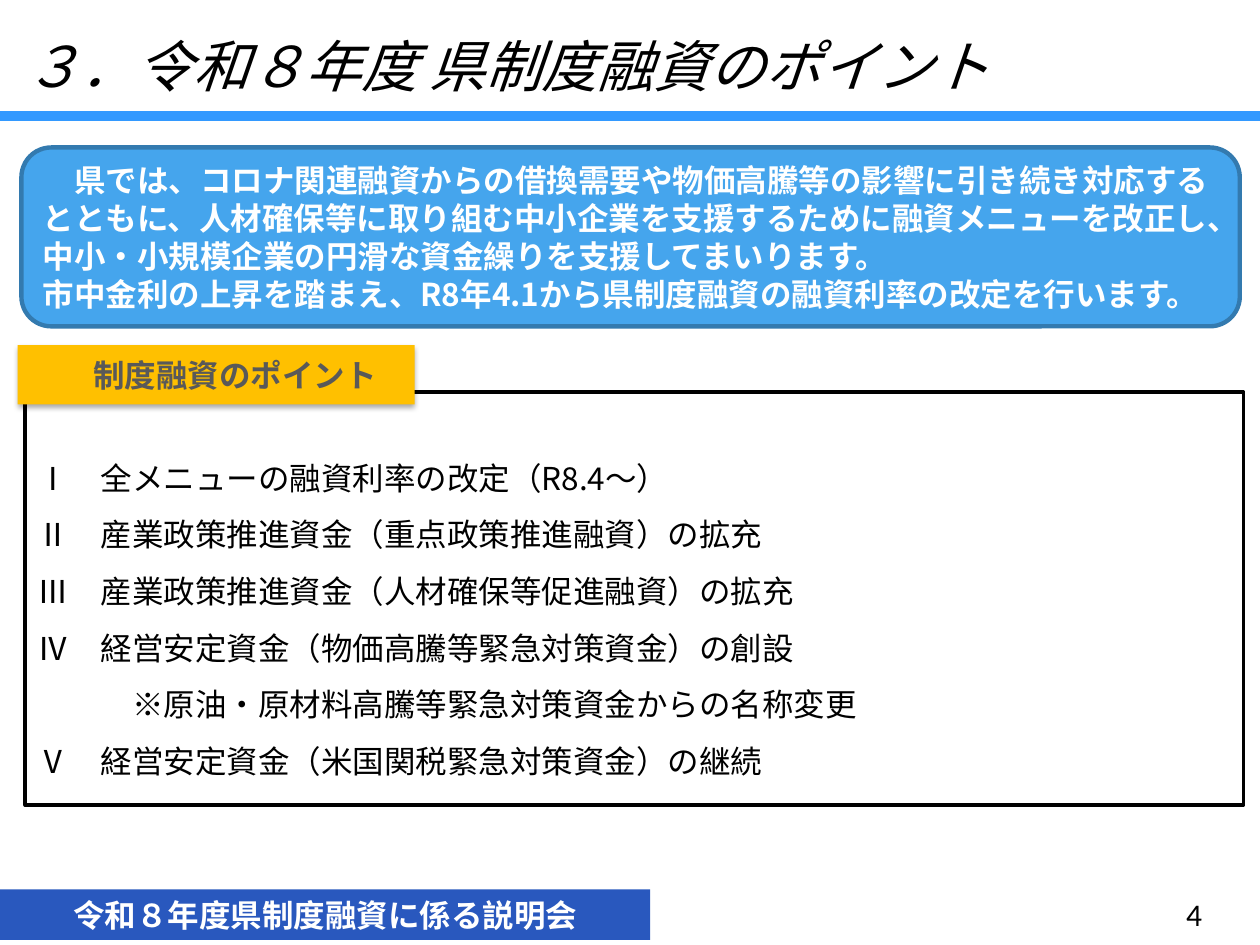
"""Build the slide on the key points of the prefectural loan scheme."""
import pptx
import pptx.util
import pptx.dml.color
import pptx.enum.shapes
import pptx.enum.text
import pptx.oxml
import pptx.oxml.ns

Inches = pptx.util.Inches
Pt = pptx.util.Pt
RGB = pptx.dml.color.RGBColor
KIND = pptx.enum.shapes.MSO_SHAPE
ALIGN = pptx.enum.text.PP_ALIGN
ANCHOR = pptx.enum.text.MSO_ANCHOR

BLACK = RGB(0x00, 0x00, 0x00)
WHITE = RGB(0xFF, 0xFF, 0xFF)
GREY = RGB(0x59, 0x59, 0x59)
GOLD = RGB(0xFF, 0xC0, 0x00)
SKY = RGB(0x45, 0xA5, 0xED)
STEEL = RGB(0x33, 0x7A, 0xAF)
NAVY = RGB(0x29, 0x58, 0xBE)
RULE = RGB(0x33, 0x99, 0xFF)

NOTO = "Noto Sans CJK JP"
CALIBRI = "Calibri"
SPACE = "http://schemas.openxmlformats.org/drawingml/2006/main"
SHADOW = (
    f'<a:effectLst xmlns:a="{SPACE}">'
    '<a:outerShdw blurRad="39370" dist="22860" dir="5400000" rotWithShape="0">'
    '<a:srgbClr val="000000"><a:alpha val="35000"/></a:srgbClr>'
    "</a:outerShdw></a:effectLst>"
)

POINTS = [
    [("Ⅰ\u3000".replace("\u3000", "　"), NOTO), ("全メニューの融資利率の改定", CALIBRI), ("（R8.4～）", NOTO)],
    [("Ⅱ　産業政策推進資金（重点政策推進融資）の拡充", NOTO)],
    [("Ⅲ　産業政策推進資金（人材確保等促進融資）の拡充", NOTO)],
    [("Ⅳ　", NOTO), ("経営安定資金（物価高騰等緊急対策資金）の創設", CALIBRI)],
    [("※原油・原材料高騰等緊急対策資金からの名称変更", CALIBRI)],
    [("Ⅴ　経営安定資金（米国関税緊急対策資金）の継続", NOTO)],
]
POINTS[0][0] = ("Ⅰ　", NOTO)
LEAD = [
    "県では、コロナ関連融資からの借換需要や物価高騰等の影響に引き続き対応する"
    "とともに、人材確保等に取り組む中小企業を支援するために融資メニューを改正し、"
    "中小・小規模企業の円滑な資金繰りを支援してまいります。",
    "市中金利の上昇を踏まえ、R8年4.1から県制度融資の融資利率の改定を行います。",
]


def assign(item, form):
    """Set each attribute of an item from a dict of format values."""
    for name, value in form.items():
        setattr(item, name, value)


def write(para, runs, color, form, left=0, first=0):
    """Fill a paragraph with (text, font) runs and set its indents."""
    props = para._p.get_or_add_pPr()
    props.set("marL", str(Inches(left)))
    props.set("indent", str(Inches(first)))
    for text, face in runs:
        run = para.add_run()
        run.text = text
        assign(run.font, {"size": Pt(18), "name": face, **form})
        run.font.color.rgb = color
        asian = pptx.oxml.parse_xml(f'<a:ea xmlns:a="{SPACE}" typeface="{NOTO}"/>')
        run.font._element.find(pptx.oxml.ns.qn("a:latin")).addnext(asian)


def frame(shape, form):
    """Return the wrapped text frame of a shape after formatting it."""
    assign(shape.text_frame, {"word_wrap": True, **form})
    return shape.text_frame


def panel(slide, kind, place, fill=None, edge=None, width=0):
    """Add a preset shape with an optional fill and outline."""
    shape = slide.shapes.add_shape(kind, *map(Inches, place))
    shape.shadow.inherit = False
    for part, color in ((shape.fill, fill), (shape.line.fill, edge)):
        if color is None:
            part.background()
        else:
            part.solid()
            part.fore_color.rgb = color
    if edge is not None:
        shape.line.width = Pt(width)
    return shape


def label(slide, place, text, face, align, anchor, form):
    """Add a one-line black text box."""
    box = slide.shapes.add_textbox(*map(Inches, place))
    para = frame(box, {"vertical_anchor": anchor}).paragraphs[0]
    para.alignment = align
    write(para, [(text, face)], BLACK, form)


def banner(slide, place, fill, text, face, color, align, anchor, left=0):
    """Add a filled bar with one bold line and return it."""
    shape = panel(slide, KIND.RECTANGLE, place, fill)
    para = frame(shape, {"vertical_anchor": anchor}).paragraphs[0]
    para.alignment = align
    write(para, [(text, face)], color, {"bold": True}, left)
    return shape


def rule(slide):
    """Add the wide line under the title."""
    line = slide.shapes.add_connector(
        pptx.enum.shapes.MSO_CONNECTOR.STRAIGHT,
        Inches(0), Inches(0.92), Inches(10), Inches(0.92))
    line.line.color.rgb = RULE
    line.line.width = Pt(6)
    line._element.spPr.append(pptx.oxml.parse_xml(f'<a:effectLst xmlns:a="{SPACE}"/>'))


def points(slide):
    """Add the outlined box that lists the points."""
    shape = panel(slide, KIND.RECTANGLE, (0.2, 3.11, 9.67, 3.28), None, BLACK, 2)
    text = frame(shape, {"vertical_anchor": ANCHOR.TOP, "margin_top": Inches(0.53)})
    for count, runs in enumerate(POINTS):
        para = text.add_paragraph() if count else text.paragraphs[0]
        assign(para, {"alignment": ALIGN.LEFT, "line_spacing": 1.5 if count else 1.0})
        note = runs[0][0].startswith("※")
        write(para, runs, BLACK, {}, 0.75 if note else 0)


def lead(slide):
    """Add the rounded box with the opening statement."""
    shape = panel(slide, KIND.ROUNDED_RECTANGLE, (0.17, 1.17, 9.67, 1.42), SKY, STEEL, 2.5)
    text = frame(shape, {"vertical_anchor": ANCHOR.MIDDLE})
    for count, words in enumerate(LEAD):
        para = text.add_paragraph() if count else text.paragraphs[0]
        para.alignment = ALIGN.LEFT
        write(para, [(words, NOTO)], WHITE, {"bold": True}, first=0 if count else 0.25)


def main():
    """Build and save the slide."""
    deck = pptx.Presentation()
    assign(deck, {"slide_width": Inches(10), "slide_height": Inches(7.5)})
    slide = deck.slides.add_slide(deck.slide_layouts[6])
    rule(slide)
    banner(slide, (0, 7.06, 5.16, 0.4), NAVY, "令和８年度県制度融資に係る説明会",
           NOTO, WHITE, ALIGN.CENTER, ANCHOR.TOP)
    points(slide)
    label(slide, (7.31, 7.05, 2.33, 0.4), "4", CALIBRI, ALIGN.RIGHT, ANCHOR.MIDDLE, {})
    label(slide, (0, 0.2, 9.65, 0.64), " ３．令和８年度 県制度融資のポイント", "Arial",
          ALIGN.LEFT, ANCHOR.TOP, {"size": Pt(32), "italic": True})
    tab = banner(slide, (0.14, 2.74, 3.15, 0.47), GOLD, "制度融資のポイント",
                 CALIBRI, GREY, ALIGN.LEFT, ANCHOR.MIDDLE, 0.5)
    props = tab._element.spPr
    props.replace(props.find(pptx.oxml.ns.qn("a:effectLst")), pptx.oxml.parse_xml(SHADOW))
    lead(slide)
    deck.save("out.pptx")


if __name__ == "__main__":
    main()
